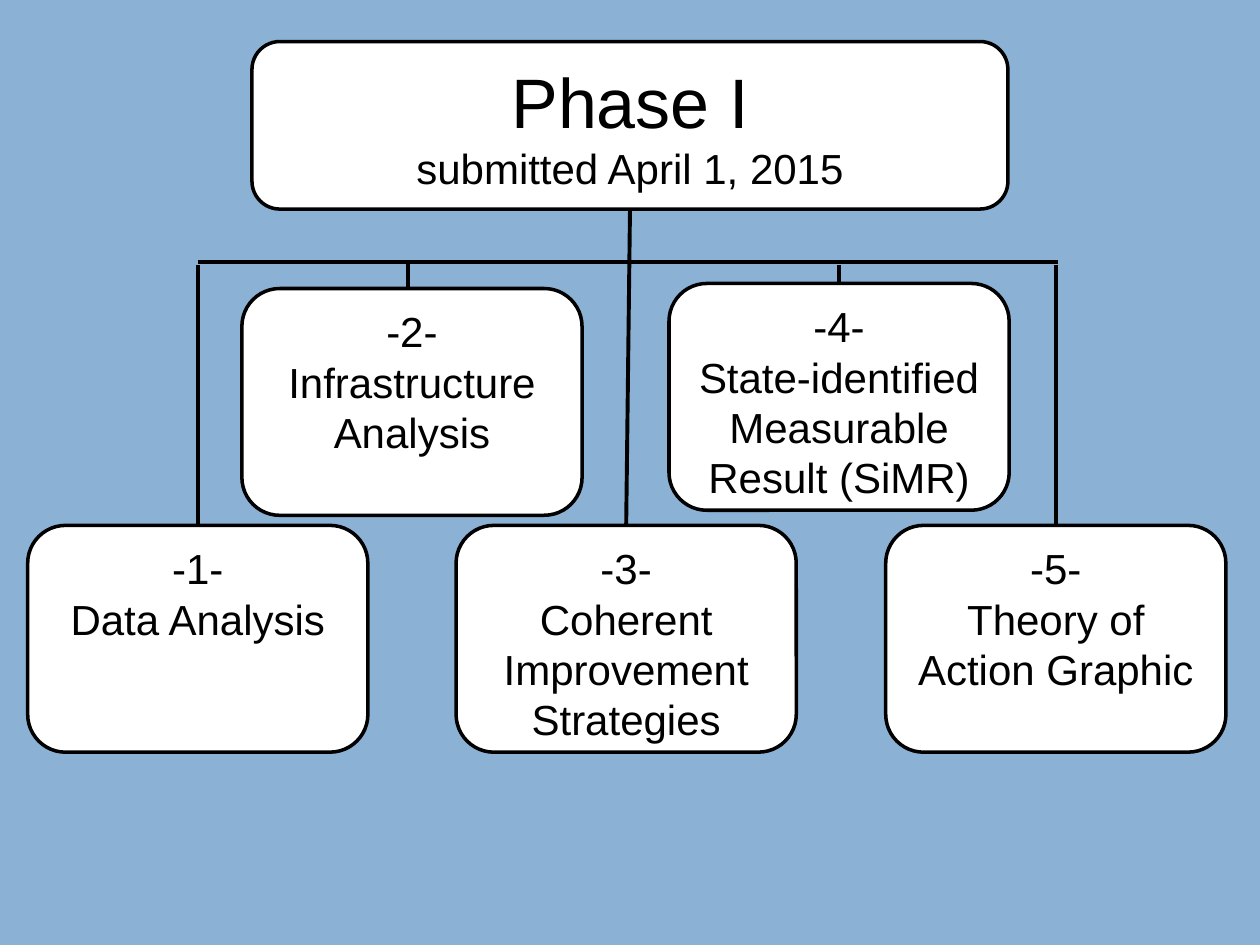
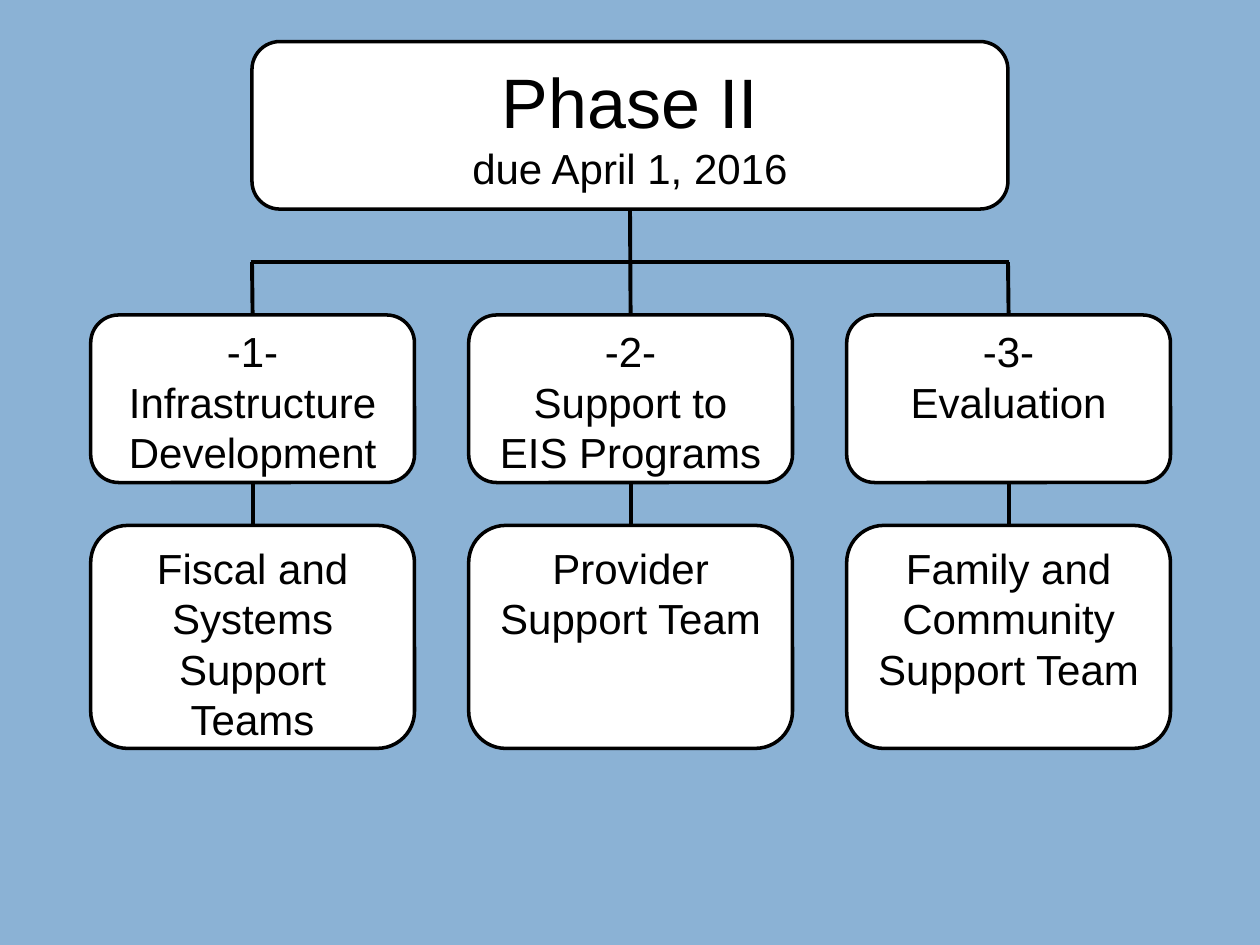
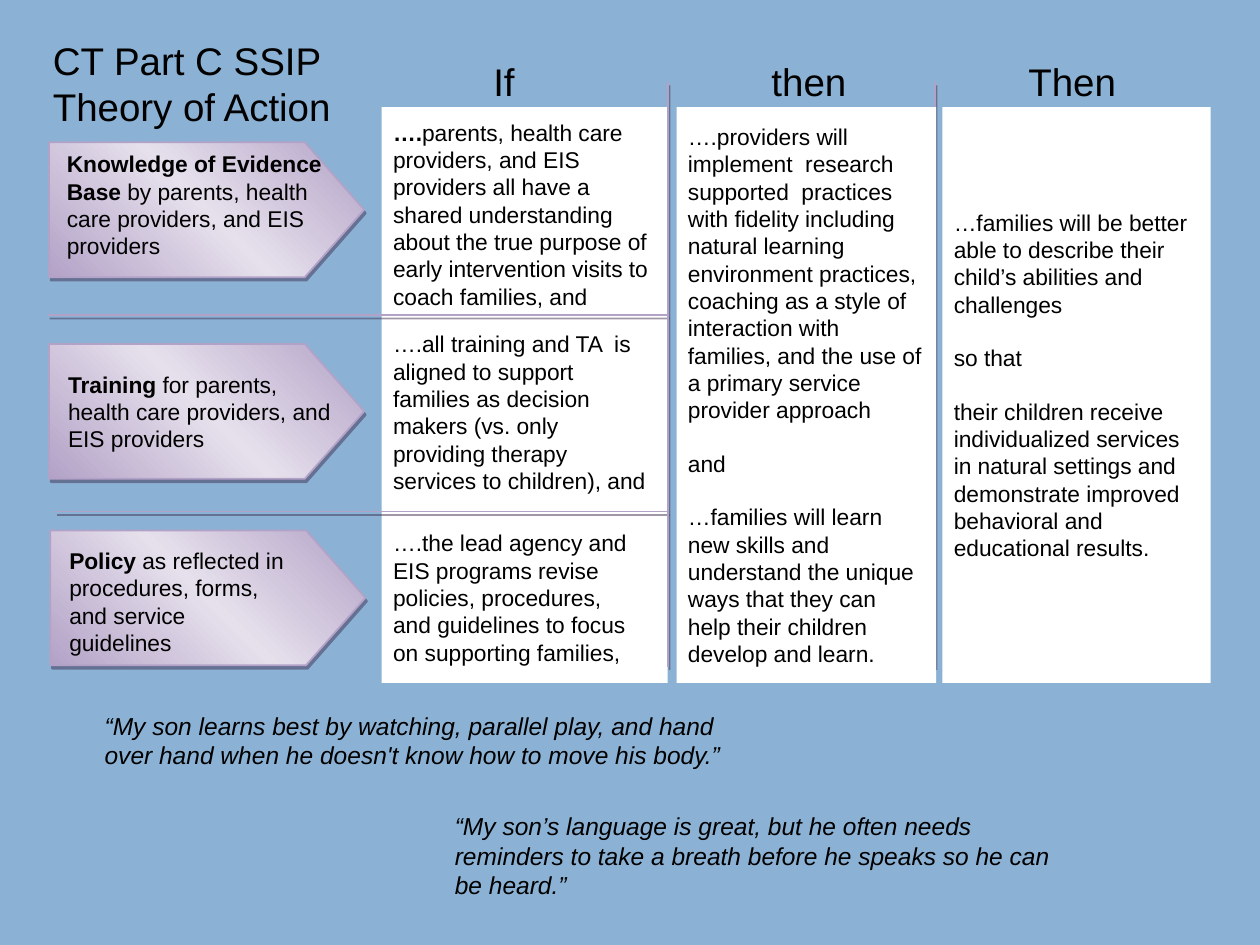
from pptx import Presentation
from pptx.dml.color import RGBColor
from pptx.enum.shapes import MSO_CONNECTOR, MSO_SHAPE
from pptx.enum.text import MSO_ANCHOR, PP_ALIGN
from pptx.oxml import parse_xml
from pptx.oxml.ns import nsdecls, qn
from pptx.util import Emu, Pt

PX = 9144
FONT = "Arial"
SKY = RGBColor(0x8B, 0xB2, 0xD5)
WHITE = RGBColor(0xFF, 0xFF, 0xFF)
BLACK = RGBColor(0, 0, 0)
LILAC = RGBColor(0xB3, 0xA2, 0xC7)
PALE_LILAC = RGBColor(0xE6, 0xE0, 0xEC)
PLUM = RGBColor(0x40, 0x31, 0x52)
BOX_INSETS = (10, 5, 10, 5)
TEXT_INSETS = (9, 4, 9, 4)
BODY_SIZE = 13
GAP = 15


def emu(*lengths):
    return [Emu(length * PX) for length in lengths]


class Deck:
    def __init__(self):
        self.prs = Presentation()
        self.prs.slide_width, self.prs.slide_height = emu(1000, 750)
        self.slide = None

    def new_slide(self):
        self.slide = self.prs.slides.add_slide(self.prs.slide_layouts[6])
        fill = self.slide.background.fill
        fill.solid()
        fill.fore_color.rgb = SKY

    def set_text(self, sp, paragraphs, sizes, align=PP_ALIGN.LEFT, anchor=MSO_ANCHOR.TOP,
                 insets=TEXT_INSETS, lead="", italic=False, gap=0):
        tf = sp.text_frame
        tf.word_wrap = True
        tf.vertical_anchor = anchor
        tf.margin_left, tf.margin_top, tf.margin_right, tf.margin_bottom = emu(*insets)
        for i, text in enumerate(paragraphs):
            p = tf.paragraphs[0] if i == 0 else tf.add_paragraph()
            p.alignment = align
            if i and gap:
                p.space_before = Pt(gap)
            if lead and i == 0:
                p.text = lead
                p.runs[0].font.bold = True
                p.add_run().text = text
            else:
                p.text = text
            for r in p.runs:
                r.font.name = FONT
                r.font.size = Pt(sizes[min(i, len(sizes) - 1)])
                r.font.color.rgb = BLACK
                if italic:
                    r.font.italic = True

    def shape(self, kind, box, line=None, width=1):
        sp = self.slide.shapes.add_shape(kind, *emu(*box))
        sp.shadow.inherit = False
        sp.fill.solid()
        sp.fill.fore_color.rgb = WHITE
        if line is None:
            sp.line.fill.background()
        else:
            sp.line.color.rgb = line
            sp.line.width = Pt(width)
        return sp

    def box(self, box, paragraphs, sizes=(24,), anchor=MSO_ANCHOR.TOP, insets=BOX_INSETS):
        sp = self.shape(MSO_SHAPE.ROUNDED_RECTANGLE, box, BLACK, 2)
        self.set_text(sp, paragraphs, sizes, PP_ALIGN.CENTER, anchor, insets)
        return sp

    def phase(self, title, date):
        return self.box((200, 33, 600, 133), (title, date), (40, 24), MSO_ANCHOR.MIDDLE)

    def panel(self, box, paragraphs=(), insets=TEXT_INSETS):
        sp = self.shape(MSO_SHAPE.RECTANGLE, box)
        self.set_text(sp, paragraphs, (BODY_SIZE,), anchor=MSO_ANCHOR.MIDDLE,
                      insets=insets, gap=GAP)

    def text(self, box, text, size=BODY_SIZE, **style):
        sp = self.slide.shapes.add_textbox(*emu(*box))
        self.set_text(sp, (text,), (size,), **style)

    def cast_shadow(self, effects):
        effects.append(parse_xml(
            f'<a:outerShdw {nsdecls("a")} blurRad="0" dist="27940" dir="3780000" '
            f'algn="ctr" rotWithShape="0"><a:srgbClr val="{PLUM}">'
            f'<a:alpha val="50000"/></a:srgbClr></a:outerShdw>'))

    def arrow(self, left, top):
        sp = self.shape(MSO_SHAPE.PENTAGON, (left, top, 250, 107), LILAC)
        sp.adjustments[0] = 0.44
        props = sp.element.spPr
        stops = "".join(f'<a:gs pos="{pos}"><a:srgbClr val="{color}"/></a:gs>'
                        for pos, color in ((0, LILAC), (50000, PALE_LILAC), (100000, LILAC)))
        props.replace(props.find(qn("a:solidFill")), parse_xml(
            f'<a:gradFill {nsdecls("a")} rotWithShape="1"><a:gsLst>{stops}</a:gsLst>'
            f'<a:lin ang="18900000" scaled="1"/></a:gradFill>'))
        self.cast_shadow(props.find(qn("a:effectLst")))

    def line(self, start, end, color=BLACK, width=2.25, above=None, below=None, shadow=False):
        cn = self.slide.shapes.add_connector(MSO_CONNECTOR.STRAIGHT, *emu(*start, *end))
        cn.line.color.rgb = color
        cn.line.width = Pt(width)
        if above is not None:
            cn.begin_connect(above, 2)
        if below is not None:
            cn.end_connect(below, 0)
        effects = parse_xml(f'<a:effectLst {nsdecls("a")}/>')
        cn.element.spPr.append(effects)
        if shadow:
            self.cast_shadow(effects)

    def divider(self, start, end):
        self.line(start, end, LILAC, 1, shadow=True)


def phase_one(deck):
    deck.new_slide()
    phase = deck.phase("Phase I", "submitted April 1, 2015")
    components = (
        (22, 417, "Data Analysis"),
        (192, 229, "Infrastructure Analysis"),
        (362, 417, "Coherent Improvement Strategies"),
        (531, 225, "State-identified Measurable Result (SiMR)"),
        (703, 417, "Theory of Action Graphic"),
    )
    boxes = [deck.box((left, top, 270, 180), (f"-{number}-", name))
             for number, (left, top, name) in enumerate(components, 1)]
    deck.line((157, 208), (840, 208))
    deck.line((157, 210), (157, 417), below=boxes[0])
    deck.line((324, 208), (324, 229))
    deck.line((500, 166), (497, 417), above=phase, below=boxes[2])
    deck.line((666, 210), (666, 225), below=boxes[3])
    deck.line((838, 210), (838, 417), below=boxes[4])


def phase_two(deck):
    deck.new_slide()
    phase = deck.phase("Phase II", "due April 1, 2016")
    strands = (
        (("Infrastructure", "Development"), "Fiscal and Systems Support Teams"),
        (("Support to", "EIS Programs"), "Provider Support Team"),
        (("Evaluation",), "Family and Community Support Team"),
    )
    deck.line((199, 208), (801, 208))
    for i, (strand, team) in enumerate(strands):
        left, center = 72 + 300 * i, 200 + 300 * i
        strand_box = deck.box((left, 250, 257, 133), (f"-{i + 1}-", *strand),
                              insets=(10, 2, 10, 0))
        team_box = deck.box((left, 417, 257, 177), (team,))
        deck.line((center, 208), (center, 250), above=phase if i == 1 else None,
                  below=strand_box)
        deck.line((center, 383), (center, 417), above=strand_box, below=team_box)


def theory_of_action(deck):
    deck.new_slide()
    deck.divider((742, 65), (742, 529))
    deck.panel((303, 85, 227, 457))
    inputs = (
        ((39, 113), (44, 115, 221, 102), "Knowledge of Evidence Base ",
         "by parents, health care providers, and EIS providers"),
        ((39, 273), (45, 290, 227, 73), "Training",
         " for parents, health care providers, and EIS providers"),
        ((40, 421), (46, 430, 193, 90), "Policy ",
         "as reflected in procedures, forms, and service guidelines"),
    )
    for corner, label_box, lead, label in inputs:
        deck.arrow(*corner)
        deck.text(label_box, label, lead=lead)
    for left, width, heading in ((377, 46, "If"), (585, 114, "then"), (794, 114, "Then")):
        deck.text((left, 42, width, 38), heading, 22, align=PP_ALIGN.CENTER)
    deck.divider((38, 250), (530, 250))
    deck.divider((44, 406), (530, 406))
    deck.text((303, 90, 227, 154),
              "parents, health care providers, and EIS providers all have a shared "
              "understanding about the true purpose of early intervention visits to "
              "coach families, and", lead="….")
    deck.text((303, 258, 227, 137),
              "….all training and TA  is aligned to support families as decision makers "
              "(vs. only providing therapy services to children), and")
    deck.text((303, 416, 209, 117),
              "….the lead agency and EIS programs revise policies, procedures, and "
              "guidelines to focus on supporting families,")
    deck.panel((537, 85, 206, 457), (
        "….providers will implement  research supported  practices with fidelity "
        "including natural learning environment practices, coaching as a style of "
        "interaction with families, and the use of a primary service provider approach",
        "and",
        "…families will learn new skills and understand the unique ways that they can "
        "help their children develop and learn."))
    deck.divider((530, 65), (530, 529))
    deck.panel((748, 85, 213, 457), (
        "…families will be better able to describe their child’s abilities and challenges",
        "so that",
        "their children receive individualized services in natural settings and "
        "demonstrate improved behavioral and educational results."),
        insets=(9, 4, 9, 20))
    deck.text((74, 560, 509, 56),
              "“My son learns best by watching, parallel play, and hand over hand when he "
              "doesn't know how to move his body.”", 14, italic=True)
    deck.text((352, 640, 500, 80),
              "“My son’s language is great, but he often needs reminders to take a breath "
              "before he speaks so he can be heard.”", 14, italic=True)
    deck.text((33, 25, 265, 73), "CT Part C SSIP\vTheory of Action", 22)


def main():
    deck = Deck()
    phase_one(deck)
    phase_two(deck)
    theory_of_action(deck)
    deck.prs.save("out.pptx")


if __name__ == "__main__":
    main()
